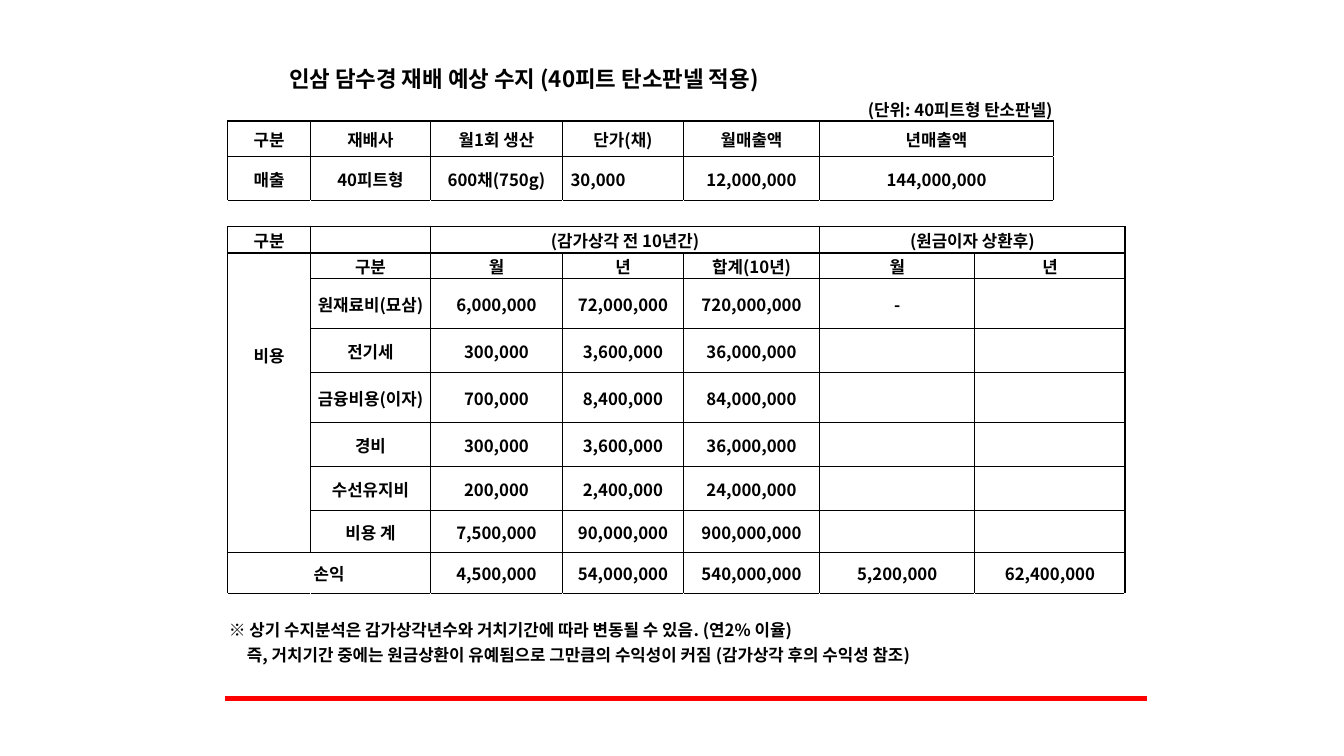
from lxml import etree
from pptx import Presentation
from pptx import util as u
from pptx.dml.color import RGBColor
from pptx.enum import shapes, text
from pptx.oxml.ns import qn

BLACK = RGBColor(0x00, 0x00, 0x00)
WHITE = RGBColor(0xFF, 0xFF, 0xFF)
RED = RGBColor(0xFF, 0x00, 0x00)
FONT = "Noto Sans CJK KR"
TITLE_SIZE, BODY_SIZE, EMPTY_SIZE = 16, 12, 10
INSET = 0.01

COLUMNS = [0.82, 1.19, 1.31, 1.2, 1.35, 1.54, 0.78, 0.71]
ROWS = [0.33, 0.27, 0.35, 0.44, 0.26, 0.26, 0.25] + [0.44] * 5 + [0.41] * 2 + [0.22, 0.25, 0.26]
SALES_ROWS, COST_ROWS = range(2, 4), range(5, 14)
SALES_COLUMNS = range(7)

CONTENT = [
    ["인삼 담수경 재배 예상 수지 (40피트 탄소판넬 적용)"],
    ["", "", "", "", "(단위: 40피트형 탄소판넬)"],
    ["구분", "재배사", "월1회 생산", "단가(채)", "월매출액", "년매출액"],
    ["매출", "40피트형", "600채(750g)", "30,000", "12,000,000", "144,000,000"],
    [],
    ["구분", "", "(감가상각 전 10년간)", "", "", "(원금이자 상환후)"],
    ["비용", "구분", "월", "년", "합계(10년)", "월", "년"],
    ["", "원재료비(묘삼)", "6,000,000", "72,000,000", "720,000,000", "-"],
    ["", "전기세", "300,000", "3,600,000", "36,000,000"],
    ["", "금융비용(이자)", "700,000", "8,400,000", "84,000,000"],
    ["", "경비", "300,000", "3,600,000", "36,000,000"],
    ["", "수선유지비", "200,000", "2,400,000", "24,000,000"],
    ["", "비용 계", "7,500,000", "90,000,000", "900,000,000"],
    ["손익", "", "4,500,000", "54,000,000", "540,000,000", "5,200,000", "62,400,000"],
    [],
    ["※ 상기 수지분석은 감가상각년수와 거치기간에 따라 변동될 수 있음. (연2% 이율)"],
    ["즉, 거치기간 중에는 원금상환이 유예됨으로 그만큼의 수익성이 커짐 (감가상각 후의 수익성 참조)"],
]
TITLE, UNIT, UNIT_PRICE, COST, NOTE, NOTE_MORE = (0, 0), (1, 4), (3, 3), (6, 0), (15, 0), (16, 0)

# First cell of each merged area: rows and columns it covers
SPANS = {TITLE: (1, 5), UNIT: (1, 3), (5, 2): (1, 3), (5, 5): (1, 3),
         COST: (7, 1), (13, 0): (1, 2), NOTE: (1, 8), NOTE_MORE: (1, 8)}
SPANS.update({(row, 5): (1, 2) for row in (0, 2, 3, 4)})
SPANS.update({(row, 6): (1, 2) for row in range(6, 15)})

ALIGN = {UNIT: text.PP_ALIGN.RIGHT, UNIT_PRICE: text.PP_ALIGN.LEFT,
         NOTE: text.PP_ALIGN.LEFT, NOTE_MORE: text.PP_ALIGN.LEFT}
LEFT_INSET = {UNIT_PRICE: 0.08, NOTE_MORE: 0.19}
BOTTOM_INSET = {COST: 0.94}


def is_framed(row, column):
    """Tell whether a cell belongs to the sales or the cost grid."""
    if row in SALES_ROWS:
        return column in SALES_COLUMNS
    return row in COST_ROWS and 0 <= column < len(COLUMNS)


def draw_borders(cell, row, column):
    """Black where either side of an edge is in a grid, white elsewhere."""
    neighbours = {"a:lnL": (row, column - 1), "a:lnR": (row, column + 1),
                  "a:lnT": (row - 1, column), "a:lnB": (row + 1, column)}
    properties = cell._tc.get_or_add_tcPr()
    for order, (edge, neighbour) in enumerate(neighbours.items()):
        color = BLACK if is_framed(row, column) or is_framed(*neighbour) else WHITE
        line = etree.Element(qn(edge), w=str(u.Pt(1)))
        fill = etree.SubElement(line, qn("a:solidFill"))
        etree.SubElement(fill, qn("a:srgbClr"), val=str(color))
        properties.insert(order, line)


def write_cell(cell, place, words):
    cell.margin_left = u.Inches(LEFT_INSET.get(place, INSET))
    cell.margin_right = cell.margin_top = u.Inches(INSET)
    cell.margin_bottom = u.Inches(BOTTOM_INSET.get(place, 0))
    on_base = place in (TITLE, UNIT)
    cell.vertical_anchor = text.MSO_ANCHOR.BOTTOM if on_base else text.MSO_ANCHOR.MIDDLE
    para = cell.text_frame.paragraphs[0]
    para.alignment = ALIGN.get(place, text.PP_ALIGN.CENTER)
    if not words:
        etree.SubElement(para._p, qn("a:endParaRPr"), sz=str(EMPTY_SIZE * 100))
        return
    span = para.add_run()
    span.text = words
    span.font.size = u.Pt(TITLE_SIZE if place == TITLE else BODY_SIZE)
    span.font.bold = True
    span.font.name = FONT
    span.font.color.rgb = BLACK
    etree.SubElement(span._r.get_or_add_rPr(), qn("a:ea"), typeface=FONT)


def add_forecast_table(page, left, top):
    frame = page.shapes.add_table(len(ROWS), len(COLUMNS), u.Inches(left), u.Inches(top),
                                  u.Inches(sum(COLUMNS)), u.Inches(sum(ROWS)))
    table = frame.table
    table.first_row = table.horz_banding = False
    for column, width in zip(table.columns, COLUMNS):
        column.width = u.Inches(width)
    for row, height in zip(table.rows, ROWS):
        row.height = u.Inches(height)
    for row, words in enumerate(CONTENT):
        padded = words + [""] * (len(COLUMNS) - len(words))
        for column, content in enumerate(padded):
            cell = table.cell(row, column)
            cell.fill.background()
            write_cell(cell, (row, column), content)
            draw_borders(cell, row, column)
    for (row, column), (down, across) in SPANS.items():
        table.cell(row, column).merge(table.cell(row + down - 1, column + across - 1))


def add_footer_rule(page, left, right, height):
    rule = page.shapes.add_connector(shapes.MSO_CONNECTOR.STRAIGHT, u.Inches(left),
                                     u.Inches(height), u.Inches(right), u.Inches(height))
    rule.line.color.rgb = RED
    rule.line.width = u.Pt(3)
    etree.SubElement(rule._element.spPr, qn("a:effectLst"))


def main():
    deck = Presentation()
    deck.slide_width, deck.slide_height = u.Inches(13.33), u.Inches(7.5)
    page = deck.slides.add_slide(deck.slide_layouts[6])
    add_footer_rule(page, 2.23, 11.38, 6.93)
    add_forecast_table(page, 2.26, 0.6)
    deck.save("out.pptx")


if __name__ == "__main__":
    main()
